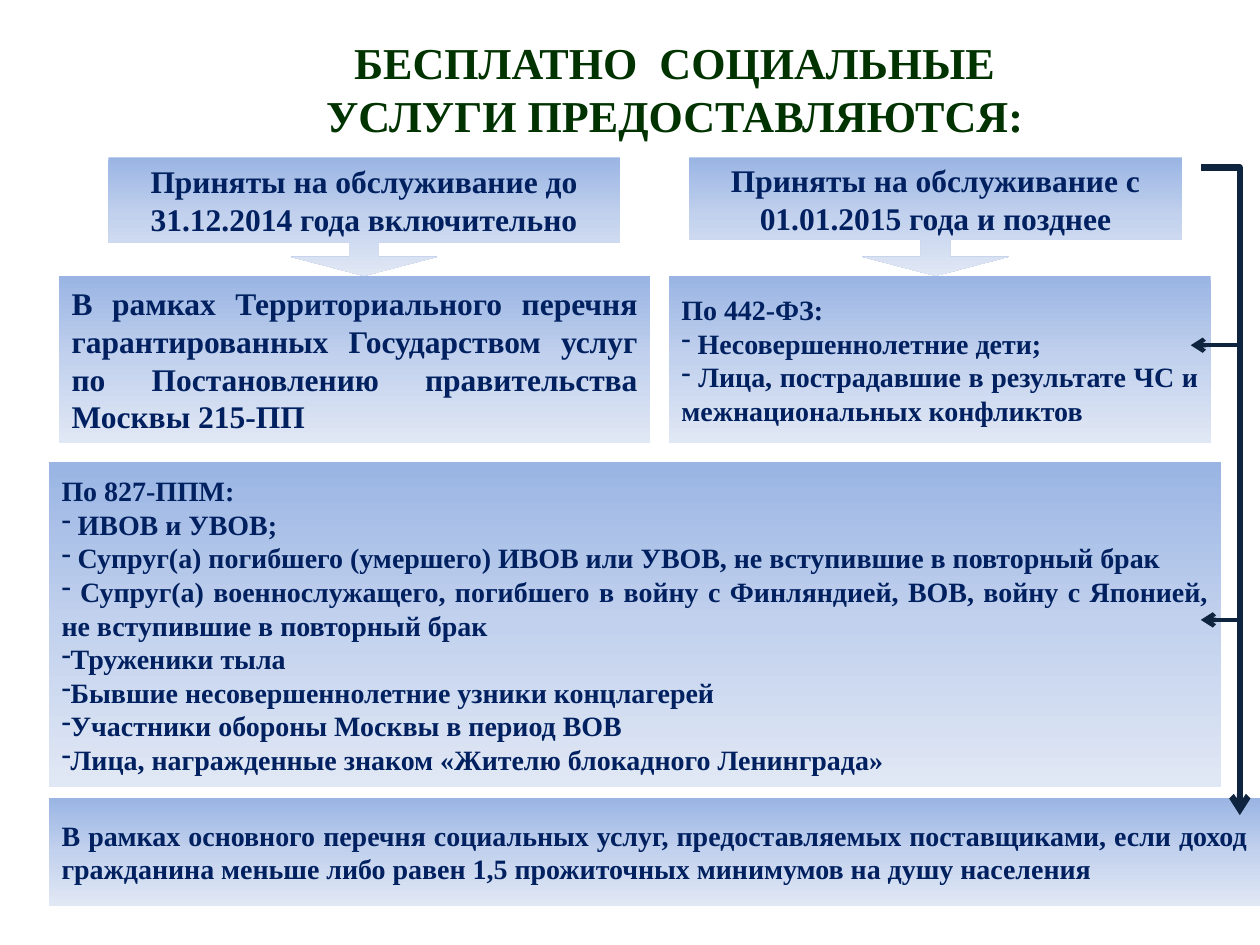
from copy import deepcopy

from lxml.etree import SubElement
from pptx import Presentation
from pptx.dml.color import RGBColor
from pptx.enum.shapes import MSO_CONNECTOR as Connector, MSO_SHAPE as Shape
from pptx.enum.text import MSO_ANCHOR as Anchor, PP_ALIGN as Align
from pptx.oxml.ns import qn
from pptx.util import Inches, Pt

COLORS = {
    "title": "003300",
    "text": "002060",
    "line": "0F243E",
    "top": "9AB5E4",
    "middle": "C2D1ED",
    "bottom": "E1E8F5",
}
FONT = "Times New Roman"

CALLOUTS = [
    ((0.86, 1.25, 4.06, 0.94), 0.719,
     "Приняты на обслуживание до 31.12.2014 года включительно"),
    ((5.47, 1.25, 3.91, 0.94), 0.694,
     "Приняты на обслуживание с 01.01.2015 года и позднее"),
]
BOXES = [
    ((0.47, 2.19, 4.69, 1.33), 18,
     "В рамках Территориального перечня гарантированных Государством услуг "
     "по Постановлению правительства Москвы 215-ПП", []),
    ((5.31, 2.19, 4.3, 1.33), 16, "По 442-ФЗ:", [
        " Несовершеннолетние дети;",
        " Лица, пострадавшие в результате ЧС и межнациональных конфликтов",
    ]),
    ((0.39, 6.33, 9.61, 0.86), 16,
     "В рамках основного перечня социальных услуг, предоставляемых поставщиками, "
     "если доход гражданина меньше либо равен 1,5 прожиточных минимумов "
     "на душу населения", []),
    ((0.39, 3.67, 9.3, 2.58), 16, "По 827-ППМ:", [
        " ИВОВ и УВОВ;",
        " Супруг(а) погибшего (умершего) ИВОВ или УВОВ, не вступившие в повторный брак",
        " Супруг(а) военнослужащего, погибшего в войну с Финляндией, ВОВ, "
        "войну с Японией, не вступившие в повторный брак",
        "Труженики тыла",
        "Бывшие несовершеннолетние узники концлагерей",
        "Участники обороны Москвы в период ВОВ",
        "Лица, награжденные знаком «Жителю блокадного Ленинграда»",
    ]),
]
TRUNK_X = 9.84
BRANCHES = [(9.53, 4.92), (9.45, 2.74)]


def rgb(name):
    return RGBColor.from_string(COLORS[name])


def add_dash(paragraph):
    properties = paragraph._p.get_or_add_pPr()
    properties.set("marL", "0")
    properties.set("indent", "0")
    SubElement(properties, qn("a:buFontTx"))
    SubElement(properties, qn("a:buChar")).set("char", "-")


def write_text(shape, heading, items, size, align, color="text"):
    frame = shape.text_frame
    frame.word_wrap = True
    frame.vertical_anchor = Anchor.MIDDLE
    for index, text in enumerate([heading] + items):
        paragraph = frame.add_paragraph() if index else frame.paragraphs[0]
        paragraph.text = text
        paragraph.alignment = align
        if index:
            add_dash(paragraph)
        paragraph.font.name = FONT
        paragraph.font.size = Pt(size)
        paragraph.font.bold = True
        paragraph.font.color.rgb = rgb(color)


def fill_gradient(shape):
    shape.fill.gradient()
    shape.fill.gradient_angle = 270
    stop_list = shape.fill._xPr.find(qn("a:gradFill")).find(qn("a:gsLst"))
    stop_list.insert(1, deepcopy(stop_list[0]))
    stops = shape.fill.gradient_stops
    for stop, position, name in zip(stops, (0, 0.5, 1), ("top", "middle", "bottom")):
        stop.position = position
        stop.color.rgb = rgb(name)


def add_panel(slide, kind, bounds):
    shape = slide.shapes.add_shape(kind, *map(Inches, bounds))
    shape.shadow.inherit = False
    shape.line.fill.background()
    fill_gradient(shape)
    return shape


def add_title(slide, text):
    box = slide.shapes.add_textbox(*map(Inches, (2.27, 0.23, 6.17, 0.94)))
    write_text(box, text, [], 25.2, Align.CENTER, "title")


def add_callout(slide, bounds, body_share, text):
    shape = add_panel(slide, Shape.DOWN_ARROW_CALLOUT, bounds)
    for index, value in enumerate((0.25, 0.615, 0.161, body_share)):
        shape.adjustments[index] = value
    write_text(shape, text, [], 18, Align.CENTER)


def add_arrow(slide, kind, start, end, width):
    arrow = slide.shapes.add_connector(kind, *map(Inches, start + end))
    arrow.line.color.rgb = rgb("line")
    arrow.line.width = Pt(width)
    SubElement(arrow.line._get_or_add_ln(), qn("a:tailEnd")).set("type", "arrow")
    properties = arrow._element.spPr
    SubElement(properties, qn("a:effectLst"))
    if kind == Connector.ELBOW:
        properties.find(qn("a:prstGeom")).set("prst", "bentConnector2")


def main():
    presentation = Presentation()
    presentation.slide_width = Inches(10)
    presentation.slide_height = Inches(7.5)
    slide = presentation.slides.add_slide(presentation.slide_layouts[6])

    add_title(slide, "БЕСПЛАТНО  СОЦИАЛЬНЫЕ УСЛУГИ ПРЕДОСТАВЛЯЮТСЯ:")
    for bounds, body_share, text in CALLOUTS:
        add_callout(slide, bounds, body_share, text)
    for bounds, size, heading, items in BOXES:
        panel = add_panel(slide, Shape.RECTANGLE, bounds)
        write_text(panel, heading, items, size, Align.JUSTIFY)

    add_arrow(slide, Connector.ELBOW, (9.53, 1.33), (TRUNK_X, 6.47), 3.5)
    for x, y in BRANCHES:
        add_arrow(slide, Connector.STRAIGHT, (TRUNK_X, y), (x, y), 2.5)

    presentation.save("out.pptx")


if __name__ == "__main__":
    main()
